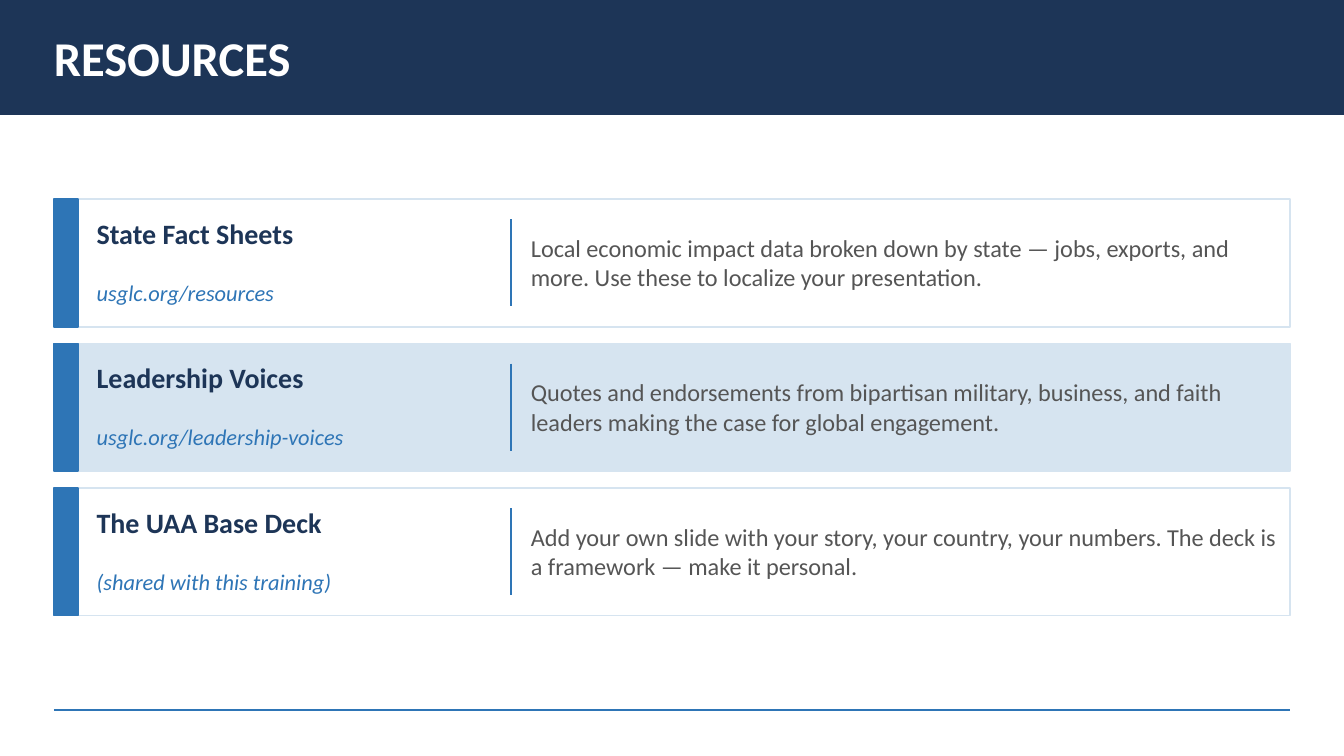
from lxml.etree import SubElement
from pptx import Presentation
from pptx.dml.color import RGBColor
from pptx.enum.shapes import MSO_CONNECTOR, MSO_SHAPE
from pptx.enum.text import MSO_ANCHOR, MSO_AUTO_SIZE, PP_ALIGN
from pptx.oxml.ns import qn
from pptx.util import Pt

NAVY, BLUE, PALE, WHITE, GREY = "1D3557", "2E75B6", "D6E4F0", "FFFFFF", "555555"
SLIDE_W, SLIDE_H = 720, 405
MARGIN = 28.8
CONTENT_W = SLIDE_W - 2 * MARGIN
HEADER_H = 61.2
CARD_TOP, CARD_H, CARD_STEP = 106.6, 68.4, 77.4

RESOURCES = [
    ("State Fact Sheets", "usglc.org/resources",
     "Local economic impact data broken down by state — jobs, exports, and more. "
     "Use these to localize your presentation."),
    ("Leadership Voices", "usglc.org/leadership-voices",
     "Quotes and endorsements from bipartisan military, business, and faith "
     "leaders making the case for global engagement."),
    ("The UAA Base Deck", "(shared with this training)",
     "Add your own slide with your story, your country, your numbers. "
     "The deck is a framework — make it personal."),
]


def rgb(color):
    return RGBColor.from_string(color)


def add_rect(s, x, y, w, h, fill, line):
    sp = s.shapes.add_shape(MSO_SHAPE.RECTANGLE, Pt(x), Pt(y), Pt(w), Pt(h))
    sp.shadow.inherit = False
    sp.fill.solid()
    sp.fill.fore_color.rgb = rgb(fill)
    sp.line.color.rgb = rgb(line)
    sp.line.width = Pt(1)
    return sp


def add_line(s, x1, y1, x2, y2):
    cx = s.shapes.add_connector(MSO_CONNECTOR.STRAIGHT, Pt(x1), Pt(y1), Pt(x2), Pt(y2))
    cx.line.color.rgb = rgb(BLUE)
    cx.line.width = Pt(1)
    SubElement(cx._element.spPr, qn("a:effectLst"))


def write(sp, text, size, color, bold=False, italic=False):
    """Fill a shape with one left-aligned, vertically centred paragraph."""
    tf = sp.text_frame
    tf.text = text
    tf.word_wrap = True
    tf.auto_size = MSO_AUTO_SIZE.NONE
    tf.vertical_anchor = MSO_ANCHOR.MIDDLE
    tf.margin_left = tf.margin_right = tf.margin_top = tf.margin_bottom = 0
    p = tf.paragraphs[0]
    p.alignment = PP_ALIGN.LEFT
    p.font.name, p.font.size = "Calibri", Pt(size)
    p.font.bold, p.font.italic = bold, italic
    p.font.color.rgb = rgb(color)


def add_text(s, x, y, w, h, text, size, color, **style):
    sp = s.shapes.add_textbox(Pt(x), Pt(y), Pt(w), Pt(h))
    write(sp, text, size, color, **style)


def add_header(s, text):
    band = add_rect(s, 0, 0, SLIDE_W, HEADER_H, NAVY, NAVY)
    title = s.shapes.title
    title.left, title.top = Pt(MARGIN), Pt(0)
    title.width, title.height = Pt(CONTENT_W), Pt(HEADER_H)
    write(title, text, 26, WHITE, bold=True)
    title._element.addprevious(band._element)


def add_card(s, y, fill, name, source, description):
    add_rect(s, MARGIN, y, CONTENT_W, CARD_H, fill, PALE)
    add_rect(s, MARGIN, y, 13, CARD_H, BLUE, BLUE)
    add_text(s, 51.8, y + 3.9, 216, 28.8, name, 15, NAVY, bold=True)
    add_text(s, 51.8, y + 37.5, 216, 25.2, source, 12, BLUE, italic=True)
    add_line(s, 273.6, y + 10.8, 273.6, y + 57.4)
    add_text(s, 284.4, y + 3.3, 399.6, 61.2, description, 13, GREY)


def main():
    prs = Presentation()
    prs.slide_width, prs.slide_height = Pt(SLIDE_W), Pt(SLIDE_H)
    s = prs.slides.add_slide(prs.slide_layouts[5])
    add_header(s, "RESOURCES")
    for i, resource in enumerate(RESOURCES):
        add_card(s, CARD_TOP + i * CARD_STEP, PALE if i % 2 else WHITE, *resource)
    add_line(s, MARGIN, 380.2, SLIDE_W - MARGIN, 380.2)
    prs.save("out.pptx")


if __name__ == "__main__":
    main()
